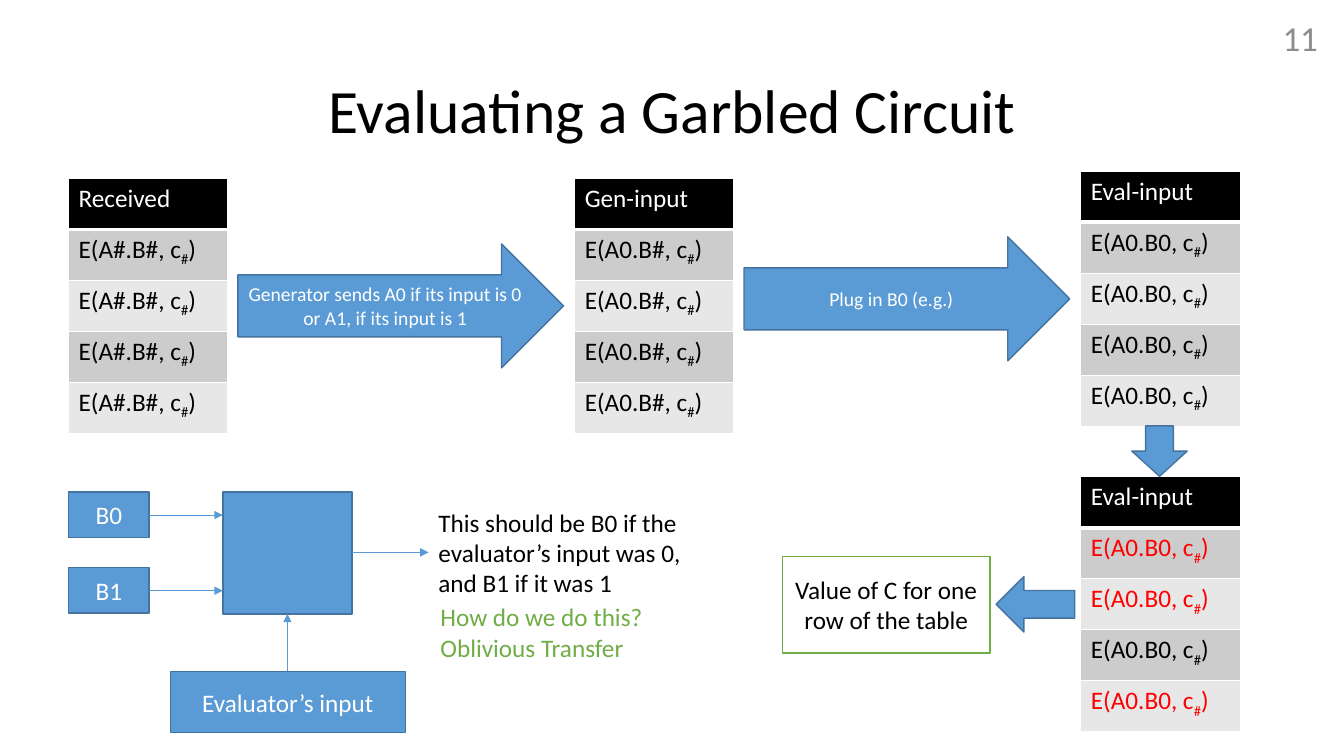
from lxml.etree import SubElement
from pptx import Presentation
from pptx.dml.color import RGBColor as RGB
from pptx.enum.shapes import MSO_CONNECTOR as LINE, MSO_SHAPE as SHAPE
from pptx.enum.text import MSO_ANCHOR as ANCHOR, PP_ALIGN as ALIGN
from pptx.oxml import parse_xml
from pptx.oxml.ns import nsdecls, qn
from pptx.util import Inches, Pt

THEME = {
    "font": "Calibri",
    "title": 44, "number": 25, "body": 18, "label": 14,
    "black": "000000", "white": "FFFFFF", "gray": "8C8C8C",
    "blue": "5B9BD5", "edge": "43739E", "green": "70AD47", "red": "FF0000",
    "band1": "CCCCCC", "band2": "E7E7E7",
}

# Grid: three table columns with an arrow in each gap
LEFT, PITCH = 0.68, 5.02
TABLE_W, ROW_H, ROWS = 1.58, 0.506, 5
ARROW_DX, ARROW_DY, ARROW_W, ARROW_H = 1.68, 0.65, 3.23, 1.23
TOP, TOP_EVAL, TOP_RESULT = 1.77, 1.7, 4.73


def color(name):
    return RGB.from_string(THEME[name])


def write(tf, parts, size="body", ink="white", align=ALIGN.CENTER, anchor=ANCHOR.MIDDLE):
    """Fill one paragraph; every second part is a subscript."""
    tf.word_wrap = True
    tf.vertical_anchor = anchor
    p = tf.paragraphs[0]
    p.alignment = align
    for i, part in enumerate(parts):
        r = p.add_run()
        r.text = part
        style = {"name": THEME["font"], "size": Pt(THEME[size]), "bold": False}
        for key, value in style.items():
            setattr(r.font, key, value)
        r.font.color.rgb = color(ink)
        if i % 2:
            r.font._element.set("baseline", "-25000")
    return p


prs = Presentation()
prs.slide_width, prs.slide_height = Inches(13.33), Inches(7.5)
s = prs.slides.add_slide(prs.slide_layouts[6])

# Free text
texts = [
    ((0.92, 0.4, 11.5, 1.45), "Evaluating a Garbled Circuit", "title", "black", ALIGN.CENTER, ANCHOR.MIDDLE),
    ((10.17, 0.17, 3, 0.4), "11", "number", "gray", ALIGN.RIGHT, ANCHOR.MIDDLE),
    ((4.25, 4.98, 3.03, 1.01), "This should be B0 if the evaluator’s input was 0, and B1 if it was 1",
     "body", "black", ALIGN.LEFT, ANCHOR.TOP),
    ((4.27, 5.92, 2.3, 0.71), "How do we do this? Oblivious Transfer",
     "body", "green", ALIGN.LEFT, ANCHOR.TOP),
]
for box, text, size, ink, align, anchor in texts:
    sp = s.shapes.add_textbox(*map(Inches, box))
    p = write(sp.text_frame, [text], size, ink, align, anchor)
    if size == "title":
        p.line_spacing = 0.9

# Garbled tables: column, top, header, row prefix, rows in red
tables = [
    (0, TOP, "Received", "E(A#.B#, c", ()),
    (1, TOP, "Gen-input", "E(A0.B#, c", ()),
    (2, TOP_EVAL, "Eval-input", "E(A0.B0, c", ()),
    (2, TOP_RESULT, "Eval-input", "E(A0.B0, c", (1, 2, 4)),
]
for col, top, header, prefix, red_rows in tables:
    box = (LEFT + col * PITCH, top, TABLE_W, ROWS * ROW_H)
    table = s.shapes.add_table(ROWS, 1, *map(Inches, box)).table
    table.first_row = table.horz_banding = False
    for row in range(ROWS):
        cell = table.cell(row, 0)
        cell.fill.solid()
        if row == 0:
            fill, ink, parts = "black", "white", [header]
        else:
            fill = "band1" if row % 2 else "band2"
            ink = "red" if row in red_rows else "black"
            parts = [prefix, "#", ")"]
        cell.fill.fore_color.rgb = color(fill)
        write(cell.text_frame, parts, "body", ink, ALIGN.LEFT, ANCHOR.TOP)
        for i, side in enumerate("LRTB"):
            width = Pt(3 if row == 0 and side == "B" else 1)
            border = parse_xml(
                f'<a:ln{side} {nsdecls("a")} w="{width}"><a:solidFill>'
                f'<a:srgbClr val="{THEME["white"]}"/></a:solidFill></a:ln{side}>')
            cell._tc.get_or_add_tcPr().insert(i, border)

# Boxes and block arrows: kind, box, text, size, rotation
arrow_x = LEFT + ARROW_DX
shapes = [
    (SHAPE.RIGHT_ARROW, (arrow_x, TOP + ARROW_DY, ARROW_W, ARROW_H),
     "Generator sends A0 if its input is 0 or A1, if its input is 1", "label", 0),
    (SHAPE.RIGHT_ARROW, (arrow_x + PITCH, TOP_EVAL + ARROW_DY, ARROW_W, ARROW_H),
     "Plug in B0 (e.g.)", "label", 0),
    (SHAPE.RIGHT_ARROW, (11.25, 4.2, 0.5, 0.55), "", "body", 90),
    (SHAPE.RIGHT_ARROW, (9.88, 5.72, 0.78, 0.55), "", "body", 180),
    (SHAPE.RECTANGLE, (LEFT, 4.88, 0.8, 0.45), "B0", "body", 0),
    (SHAPE.RECTANGLE, (LEFT, 5.63, 0.8, 0.45), "B1", "body", 0),
    (SHAPE.RECTANGLE, (2.21, 4.88, 1.28, 1.21), "", "body", 0),
    (SHAPE.RECTANGLE, (1.69, 6.66, 2.33, 0.61), "Evaluator’s input", "body", 0),
    (SHAPE.RECTANGLE, (7.76, 5.52, 2.06, 0.96), "Value of C for one row of the table", "body", 0),
]
for kind, box, text, size, rotation in shapes:
    fill, edge, ink = ("white", "green", "black") if text.startswith("Value") else ("blue", "edge", "white")
    sp = s.shapes.add_shape(kind, *map(Inches, box))
    sp.shadow.inherit = False
    sp.rotation = rotation
    sp.fill.solid()
    sp.fill.fore_color.rgb = color(fill)
    sp.line.color.rgb = color(edge)
    sp.line.width = Pt(1)
    if text:
        write(sp.text_frame, [text], size, ink)

# Wires of the selector: x1, y1, x2, y2
wires = [
    (1.48, 5.11, 2.21, 5.11),
    (1.48, 5.86, 2.21, 5.86),
    (2.85, 6.66, 2.85, 6.09),
    (3.49, 5.48, 4.25, 5.48),
]
for ends in wires:
    wire = s.shapes.add_connector(LINE.STRAIGHT, *map(Inches, ends))
    wire.line.color.rgb = color("blue")
    wire.line.width = Pt(0.5)
    SubElement(wire.line._get_or_add_ln(), qn("a:tailEnd"), type="triangle")
    SubElement(wire._element.spPr, qn("a:effectLst"))

prs.save("out.pptx")
